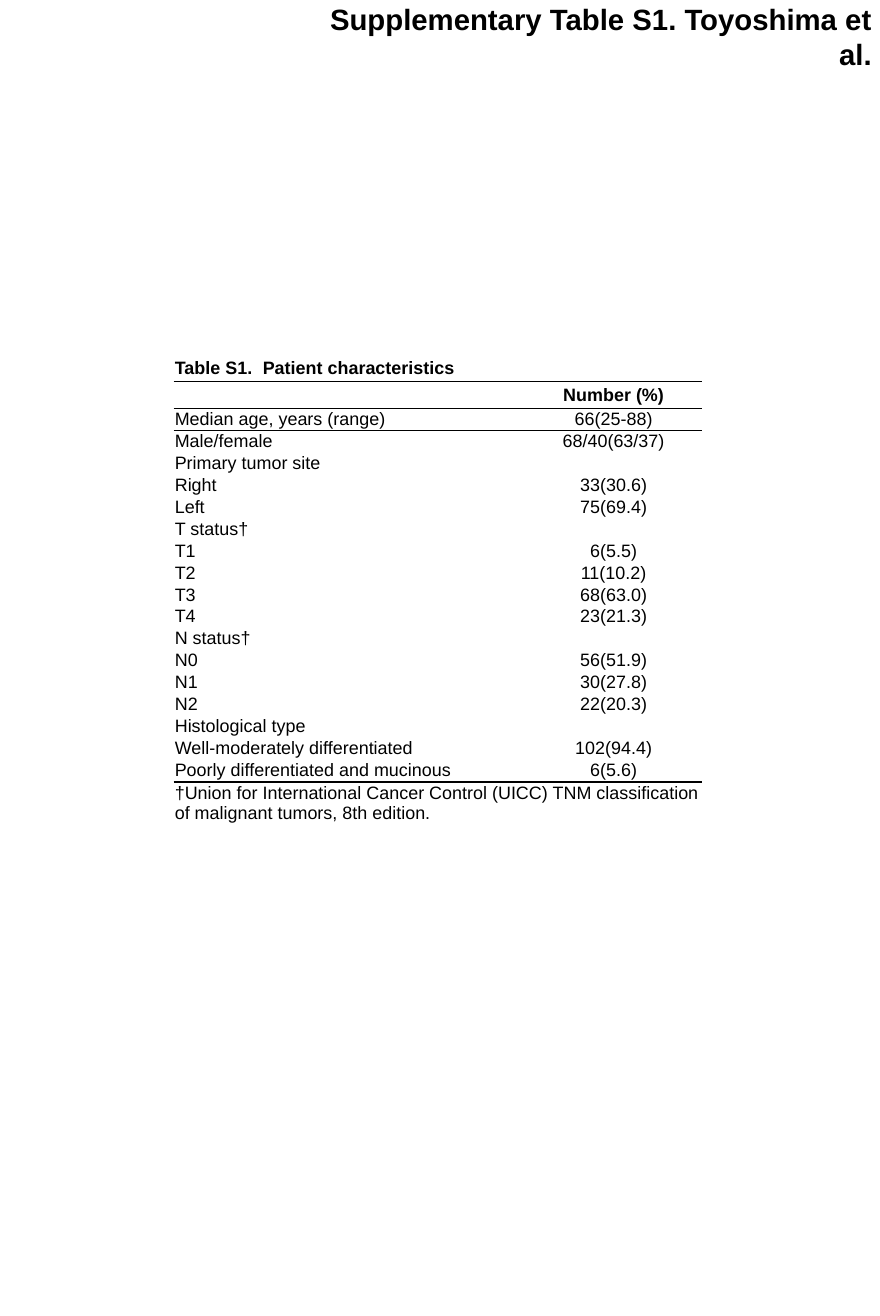
from pptx import Presentation
from pptx.dml.color import RGBColor
from pptx.enum.text import MSO_ANCHOR, PP_ALIGN
from pptx.oxml import parse_xml
from pptx.oxml.ns import nsdecls
from pptx.util import Inches, Pt

LEFT, CENTER, RIGHT = PP_ALIGN.LEFT, PP_ALIGN.CENTER, PP_ALIGN.RIGHT
MIDDLE = MSO_ANCHOR.MIDDLE
BLACK = RGBColor(0x00, 0x00, 0x00)
FONT = "Arial"
NO_STYLE = "{2D5ABB26-0587-4C30-8999-92F81FD0307C}"

# Content
HEADING = "Supplementary Table S1. Toyoshima et al."
CAPTION = ("Table S1.", "Patient characteristics")
VALUE_HEADER = "Number (%)"
CHARACTERISTICS = [  # label, columns the label spans, value
    ("Median age, years (range)", 3, "66(25-88)"),
    ("Male/female", 2, "68/40(63/37)"),
    ("Primary tumor site", 2, ""),
    ("Right", 1, "33(30.6)"),
    ("Left", 1, "75(69.4)"),
    ("T status†", 1, ""),
    ("T1", 1, "6(5.5)"),
    ("T2", 1, "11(10.2)"),
    ("T3", 1, "68(63.0)"),
    ("T4", 1, "23(21.3)"),
    ("N status†", 2, ""),
    ("N0", 2, "56(51.9)"),
    ("N1", 2, "30(27.8)"),
    ("N2", 2, "22(20.3)"),
    ("Histological type", 2, ""),
    ("Well-moderately differentiated", 3, "102(94.4)"),
    ("Poorly differentiated and mucinous", 4, "6(5.6)"),
]
FOOTNOTE = ("†Union for International Cancer Control (UICC) TNM classification "
            "of malignant tumors, 8th edition.")

# Grid, in inches
COLUMNS, COLUMN_WIDTH, VALUE_COLUMN = 6, 0.75, 4
TABLE_LEFT, TABLE_TOP = 1.48, 3.02
ROW_HEIGHTS = ([0.23, 0.23] + [0.187] * (len(CHARACTERISTICS) - 1) + [0.2, 0.36])
FOOTNOTE_ROW = len(ROW_HEIGHTS) - 1
RULES = {0: 1, 1: 0.5, FOOTNOTE_ROW - 1: 1}  # row: width of its bottom line
TEXT_SIZE = Pt(11)


def set_font(paragraph, size, bold):
    paragraph.font.name = FONT
    paragraph.font.size = size
    paragraph.font.bold = bold
    paragraph.font.color.rgb = BLACK


def format_cell(cell, bold):
    cell.margin_left = cell.margin_top = cell.margin_right = Inches(0.01)
    cell.margin_bottom = 0
    cell.vertical_anchor = MIDDLE
    cell.fill.background()
    paragraph = cell.text_frame.paragraphs[0]
    set_font(paragraph, TEXT_SIZE, bold)
    # Keeps empty cells as low as the filled ones
    paragraph._p.append(parse_xml(
        f'<a:endParaRPr {nsdecls("a")} sz="{int(TEXT_SIZE.pt * 100)}"/>'))


def add_rule(cell, tag, width):
    cell._tc.get_or_add_tcPr().insert(0, parse_xml(
        f'<a:{tag} {nsdecls("a")} w="{Pt(width)}"><a:solidFill>'
        f'<a:srgbClr val="{BLACK}"/></a:solidFill></a:{tag}>'))


def write(table, row, column, text, span=1, alignment=LEFT):
    cell = table.cell(row, column)
    if span > 1:
        cell.merge(table.cell(row, column + span - 1))
    cell.text = text
    cell.text_frame.paragraphs[0].alignment = alignment


def add_heading(slide):
    box = slide.shapes.add_textbox(Inches(2.53), Inches(0.01), Inches(4.9), Inches(0.3))
    frame = box.text_frame
    frame.word_wrap = True
    frame.margin_left = frame.margin_top = frame.margin_right = frame.margin_bottom = 0
    frame.text = HEADING
    frame.paragraphs[0].alignment = RIGHT
    set_font(frame.paragraphs[0], Pt(18), True)


def add_characteristics(slide):
    frame = slide.shapes.add_table(
        len(ROW_HEIGHTS), COLUMNS, Inches(TABLE_LEFT), Inches(TABLE_TOP),
        Inches(COLUMNS * COLUMN_WIDTH), Inches(sum(ROW_HEIGHTS)))
    table = frame.table
    table.first_row = table.horz_banding = False
    table._tbl.tblPr[0].text = NO_STYLE
    for column in table.columns:
        column.width = Inches(COLUMN_WIDTH)
    for row, height in zip(table.rows, ROW_HEIGHTS):
        row.height = Inches(height)

    # Wording
    write(table, 0, 0, CAPTION[0])
    write(table, 0, 1, CAPTION[1], 3)
    write(table, 1, VALUE_COLUMN, VALUE_HEADER, 2, CENTER)
    for row, (label, span, value) in enumerate(CHARACTERISTICS, start=2):
        write(table, row, 0, label, span)
        if value:
            write(table, row, VALUE_COLUMN, value, 2, CENTER)
    write(table, FOOTNOTE_ROW, 0, FOOTNOTE, COLUMNS)

    # Fonts and horizontal rules
    for row in range(len(ROW_HEIGHTS)):
        for column in range(COLUMNS):
            cell = table.cell(row, column)
            format_cell(cell, bold=row < 2)
            if row in RULES:
                add_rule(cell, "lnB", RULES[row])
            if row - 1 in RULES:
                add_rule(cell, "lnT", RULES[row - 1])


def main():
    presentation = Presentation()
    presentation.slide_width = Inches(7.5)
    presentation.slide_height = Inches(11.22)
    slide = presentation.slides.add_slide(presentation.slide_layouts[6])
    add_characteristics(slide)
    add_heading(slide)
    presentation.save("out.pptx")


if __name__ == "__main__":
    main()
